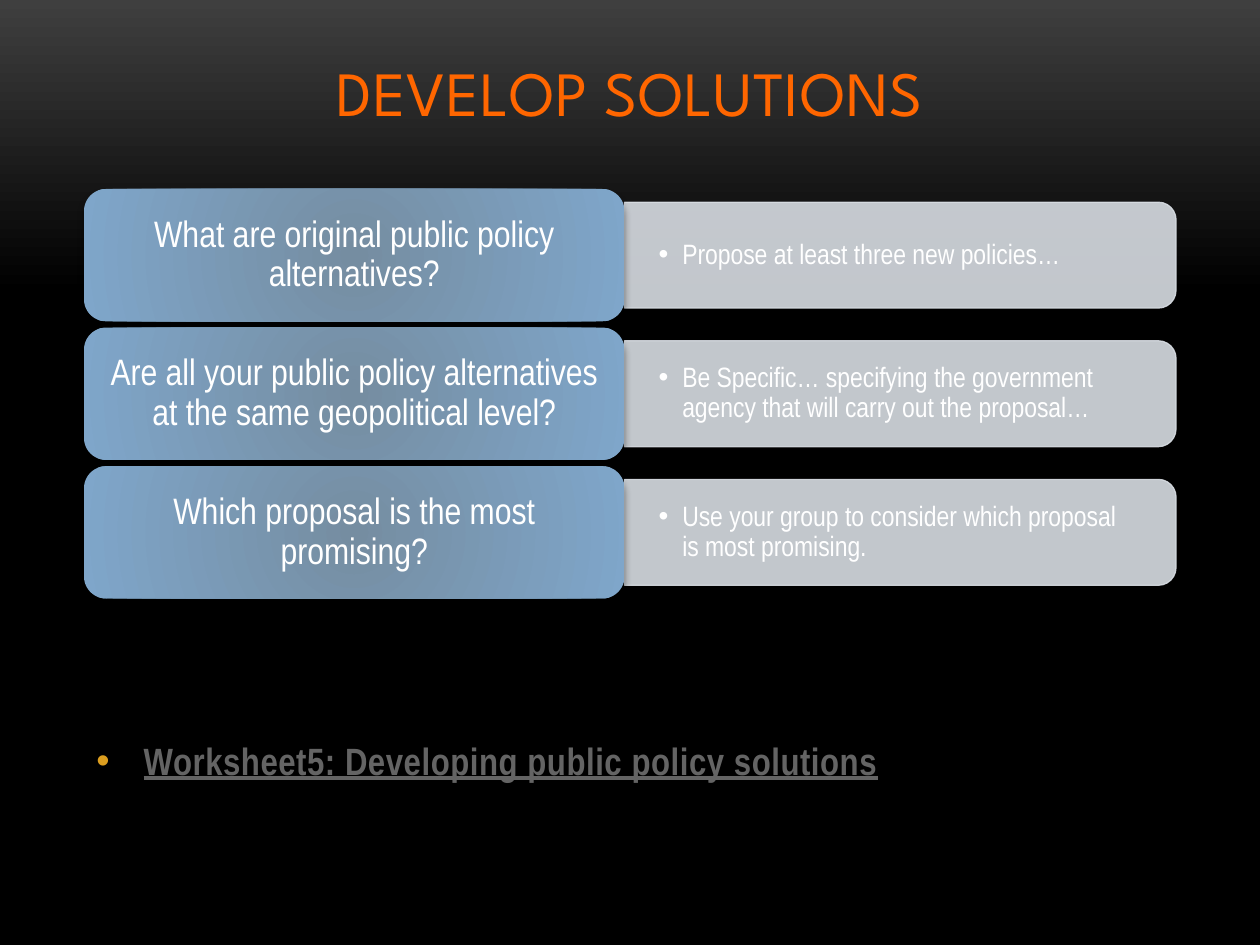
from pptx import Presentation
from pptx.dml.color import RGBColor
from pptx.enum.shapes import MSO_SHAPE
from pptx.enum.text import MSO_ANCHOR, PP_ALIGN
from pptx.oxml import parse_xml
from pptx.oxml.ns import nsdecls, qn
from pptx.util import Pt

ROUNDED = MSO_SHAPE.ROUNDED_RECTANGLE
ROUNDED_TOP = MSO_SHAPE.ROUND_2_SAME_RECTANGLE
MIDDLE = MSO_ANCHOR.MIDDLE
LEFT, CENTER = PP_ALIGN.LEFT, PP_ALIGN.CENTER
BODY_FONT, TITLE_FONT = "Arial Narrow", "League Spartan"
WHITE, PALE = "FFFFFF", "D8DDE3"
LINEAR_DOWN = '<a:lin ang="5400000" scaled="0"/>'
RADIAL = ('<a:path path="circle"><a:fillToRect l="50000" t="50000" '
          'r="50000" b="50000"/></a:path>')
SHADOW = ('<a:outerShdw {} blurRad="50800" dist="43180" dir="5400000" rotWithShape="0">'
          '<a:srgbClr val="000000"><a:alpha val="40000"/></a:srgbClr></a:outerShdw>')
ROWS = [
    ("What are original public policy alternatives?",
     "Propose at least three new policies…"),
    ("Are all your public policy alternatives at the same geopolitical level?",
     "Be Specific… specifying the government agency that will carry out the proposal…"),
    ("Which proposal is the most promising?",
     "Use your group to consider which proposal is most promising."),
]


def color(value):
    return RGBColor.from_string(value)


def set_gradient(properties, stops, direction):
    stop_xml = "".join(
        f'<a:gs pos="{position * 1000}"><a:srgbClr val="{value}"/></a:gs>'
        for position, value in stops)
    gradient = parse_xml(
        f'<a:gradFill {nsdecls("a")} rotWithShape="1">'
        f'<a:gsLst>{stop_xml}</a:gsLst>{direction}</a:gradFill>')
    properties.replace(properties.find(qn("a:solidFill")), gradient)


def set_alpha(solid_fill, percent):
    solid_fill[0].append(parse_xml(f'<a:alpha {nsdecls("a")} val="{percent * 1000}"/>'))


def add_bullet(para, indent, bullet_color=None):
    properties = para._p.get_or_add_pPr()
    properties.set("marL", str(Pt(indent)))
    properties.set("indent", str(-Pt(indent)))
    if bullet_color:
        properties.append(parse_xml(
            f'<a:buClr {nsdecls("a")}><a:srgbClr val="{bullet_color}"/></a:buClr>'))
    properties.append(parse_xml(f'<a:buFont {nsdecls("a")} typeface="Arial"/>'))
    properties.append(parse_xml(f'<a:buChar {nsdecls("a")} char="•"/>'))


def write(shape, text, size, font_color, insets, align=LEFT, font=BODY_FONT,
          line_spacing=0.9, tracking=0):
    frame = shape.text_frame
    frame.word_wrap = True
    frame.vertical_anchor = MIDDLE
    (frame.margin_left, frame.margin_top,
     frame.margin_right, frame.margin_bottom) = map(Pt, insets)
    para = frame.paragraphs[0]
    para.alignment = align
    para.line_spacing = line_spacing
    span = para.add_run()
    span.text = text
    span.font.name = font
    span.font.size = Pt(size)
    span.font.color.rgb = color(font_color)
    if tracking:
        span.font._element.set("spc", str(tracking))
    return para


def add_background(page):
    page.background.fill.solid()
    page.background.fill.fore_color.rgb = color("000000")
    set_gradient(page.element.find(".//" + qn("p:bgPr")),
                 [(0, "3F3F3F"), (31, "000000"), (100, "000000")], LINEAR_DOWN)


def add_title(page, left, top, width, height):
    box = page.shapes.add_textbox(Pt(left), Pt(top), Pt(width), Pt(height))
    write(box, "DEVELOP SOLUTIONS", 36, "FF6600", (7.2, 3.6, 7.2, 32),
          CENTER, TITLE_FONT, 1.0, 50)


def add_detail(page, text, left, top, width, height):
    panel = page.shapes.add_shape(
        ROUNDED_TOP, Pt(left + (width - height) / 2), Pt(top - (width - height) / 2),
        Pt(height), Pt(width))
    panel.rotation = 90
    panel.shadow.inherit = False
    panel.fill.solid()
    panel.fill.fore_color.rgb = color(PALE)
    panel.line.color.rgb = color(PALE)
    panel.line.width = Pt(0.75)
    for solid_fill in panel._element.spPr.iter(qn("a:solidFill")):
        set_alpha(solid_fill, 90)
    box = page.shapes.add_textbox(Pt(left), Pt(top + 3), Pt(width - 3), Pt(height - 6))
    para = write(box, text, 16, WHITE, (19.5, 10, 19.5, 10))
    add_bullet(para, 13.5)


def add_label(page, text, left, top, width, height):
    label = page.shapes.add_shape(ROUNDED, Pt(left), Pt(top), Pt(width), Pt(height))
    label.shadow.inherit = False
    label.fill.solid()
    label.line.fill.background()
    properties = label._element.spPr
    set_gradient(properties, [(0, "758DA1"), (100, "7FA6CA")], RADIAL)
    properties.find(qn("a:effectLst")).append(parse_xml(SHADOW.format(nsdecls("a"))))
    write(label, text, 21, WHITE, (6.5, 3, 6.5, 3), CENTER)


def add_questions(page, left, top, width, height):
    gap = 3.6
    row_height = (height - gap * (len(ROWS) - 1)) / len(ROWS)
    label_width = width * 0.495
    detail_height = row_height * 0.8
    for index, (question, detail) in enumerate(ROWS):
        row_top = top + index * (row_height + gap)
        add_detail(page, detail, left + label_width,
                   row_top + (row_height - detail_height) / 2,
                   width - label_width, detail_height)
        add_label(page, question, left, row_top, label_width, row_height)


def add_worksheet(page, left, top, width, height):
    box = page.shapes.add_textbox(Pt(left), Pt(top), Pt(width), Pt(height))
    para = write(box, "Worksheet5: Developing public policy solutions", 21.7, "646464",
                 (7.2, 46, 7.2, 0), line_spacing=0.8, tracking=30)
    add_bullet(para, 27, "DC9E1F")
    span = para.runs[0]
    span.font.bold = True
    span.font.underline = True


def main():
    deck = Presentation()
    deck.slide_width, deck.slide_height = Pt(720), Pt(540)
    page = deck.slides.add_slide(deck.slide_layouts[6])
    add_background(page)
    add_worksheet(page, 48, 378, 624, 72)
    add_title(page, 48, 21.6, 624, 90)
    add_questions(page, 48, 108, 624, 234)
    deck.save("out.pptx")


if __name__ == "__main__":
    main()
